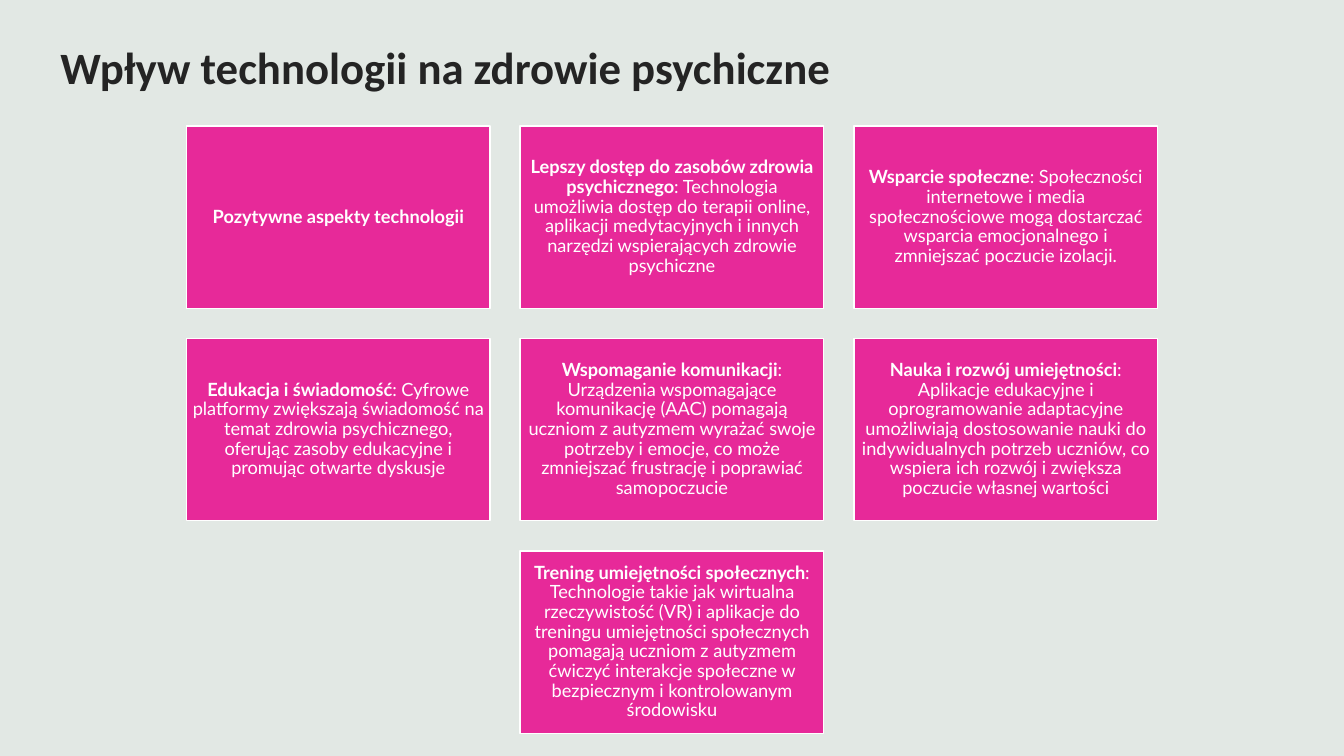
from pptx import Presentation
from pptx.dml.color import RGBColor
from pptx.enum.shapes import MSO_SHAPE
from pptx.enum.text import MSO_ANCHOR, PP_ALIGN
from pptx.util import Pt

# Content
TITLE = "Wpływ technologii na zdrowie psychiczne"
CARDS = [
    ("Pozytywne aspekty technologii", ""),
    ("Lepszy dostęp do zasobów zdrowia psychicznego",
     ": Technologia umożliwia dostęp do terapii online, aplikacji medytacyjnych "
     "i innych narzędzi wspierających zdrowie psychiczne"),
    ("Wsparcie społeczne",
     ": Społeczności internetowe i media społecznościowe mogą dostarczać "
     "wsparcia emocjonalnego i zmniejszać poczucie izolacji."),
    ("Edukacja i świadomość",
     ": Cyfrowe platformy zwiększają świadomość na temat zdrowia psychicznego, "
     "oferując zasoby edukacyjne i promując otwarte dyskusje"),
    ("Wspomaganie komunikacji",
     ": Urządzenia wspomagające komunikację (AAC) pomagają uczniom z autyzmem "
     "wyrażać swoje potrzeby i emocje, co może zmniejszać frustrację "
     "i poprawiać samopoczucie"),
    ("Nauka i rozwój umiejętności",
     ": Aplikacje edukacyjne i oprogramowanie adaptacyjne umożliwiają "
     "dostosowanie nauki do indywidualnych potrzeb uczniów, co wspiera ich "
     "rozwój i zwiększa poczucie własnej wartości"),
    ("Trening umiejętności społecznych",
     ": Technologie takie jak wirtualna rzeczywistość (VR) i aplikacje do "
     "treningu umiejętności społecznych pomagają uczniom z autyzmem ćwiczyć "
     "interakcje społeczne w bezpiecznym i kontrolowanym środowisku"),
]
COLORS = {"back": "E2E8E4", "title": "242424", "card": "E72999", "white": "FFFFFF"}

# Layout, in points
SLIDE_W, SLIDE_H = 960, 540
COLS, CARD_W, CARD_H, GAP, TOP = 3, 216.8, 130.2, 21.6, 90


def rgb(name):
    return RGBColor.from_string(COLORS[name])


def style(r, font, size, color, bold):
    r.font.name, r.font.size, r.font.bold = font, Pt(size), bold
    r.font.color.rgb = rgb(color)


def add_card(s, x, y, heading, detail):
    sp = s.shapes.add_shape(MSO_SHAPE.RECTANGLE, Pt(x), Pt(y), Pt(CARD_W), Pt(CARD_H))
    sp.shadow.inherit = False
    sp.fill.solid()
    sp.fill.fore_color.rgb = rgb("card")
    sp.line.color.rgb = rgb("white")
    sp.line.width = Pt(1)
    tf = sp.text_frame
    tf.word_wrap = True
    tf.vertical_anchor = MSO_ANCHOR.MIDDLE
    tf.margin_left = tf.margin_right = tf.margin_top = tf.margin_bottom = Pt(3.6)
    p = tf.paragraphs[0]
    p.alignment = PP_ALIGN.CENTER
    p.line_spacing = 0.9
    for text, bold in ((heading, True), (detail, False)):
        if text:
            r = p.add_run()
            r.text = text
            style(r, "Lato", 13, "white", bold)


prs = Presentation()
prs.slide_width, prs.slide_height = Pt(SLIDE_W), Pt(SLIDE_H)
s = prs.slides.add_slide(prs.slide_layouts[5])
s.background.fill.solid()
s.background.fill.fore_color.rgb = rgb("back")

# Title
title = s.shapes.title
title.left, title.top, title.width, title.height = Pt(36), Pt(15), Pt(858), Pt(62)
tf = title.text_frame
tf.text = TITLE
tf.vertical_anchor = MSO_ANCHOR.MIDDLE
p = tf.paragraphs[0]
p.alignment = PP_ALIGN.LEFT
p.line_spacing = 1.1
style(p.runs[0], "Calibri", 32, "title", True)

# Cards: every row is centred on the slide
for start in range(0, len(CARDS), COLS):
    row = CARDS[start:start + COLS]
    left = (SLIDE_W - len(row) * CARD_W - (len(row) - 1) * GAP) / 2
    y = TOP + start // COLS * (CARD_H + GAP)
    for col, (heading, detail) in enumerate(row):
        add_card(s, left + col * (CARD_W + GAP), y, heading, detail)

prs.save("out.pptx")
